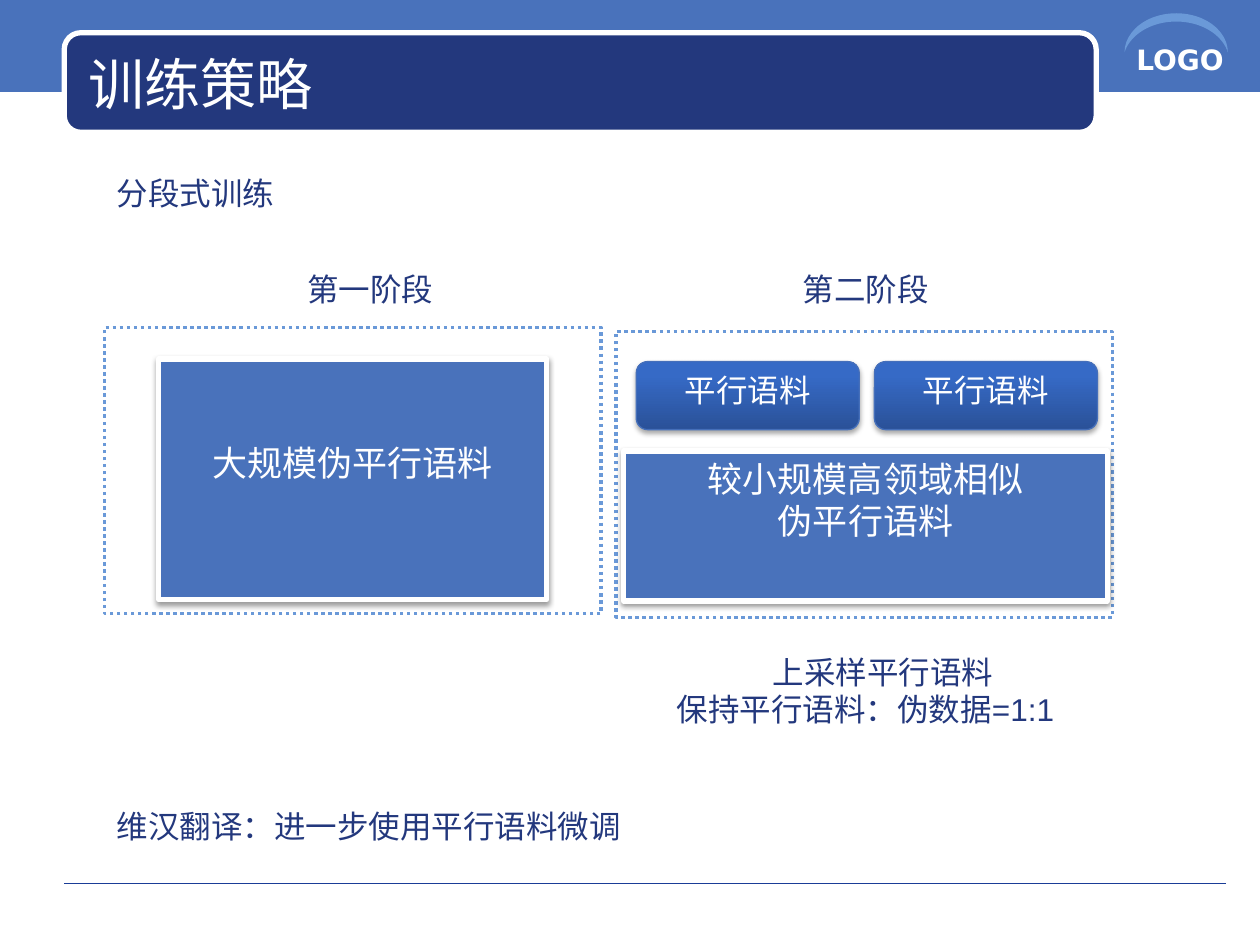
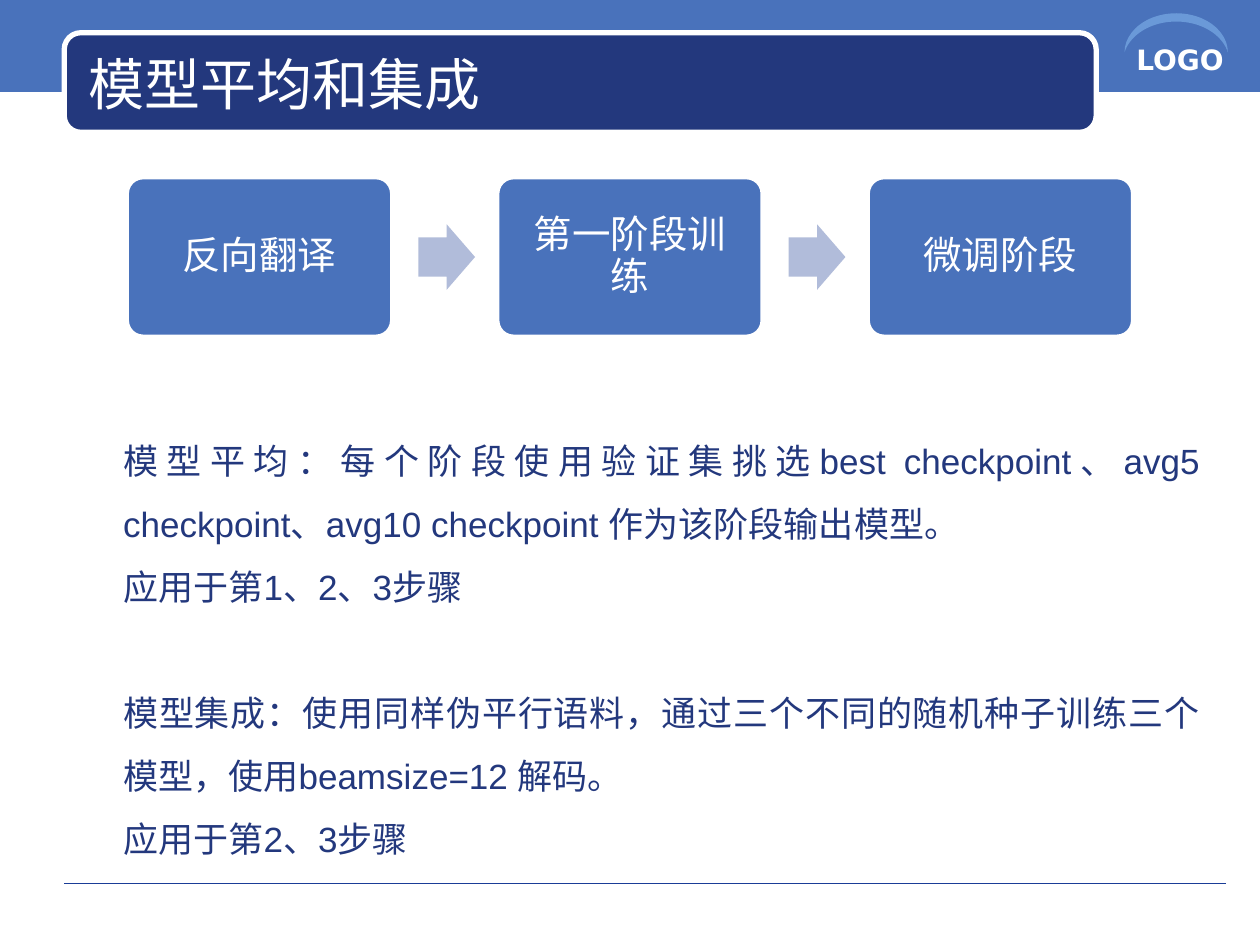
from copy import deepcopy

from lxml import etree
from pptx import Presentation
from pptx.dml.color import RGBColor
from pptx.enum import dml, shapes, text
from pptx.oxml.ns import qn
from pptx.util import Inches, Pt

SHAPE = shapes.MSO_SHAPE
ALIGN = text.PP_ALIGN
ANCHOR = text.MSO_ANCHOR


def color(value):
    return RGBColor.from_string(value)


class Deck:
    NAVY, BLUE, SKY, WHITE = "23387D", "4972BB", "6A99D8", "FFFFFF"
    PALE, RULE = "B1BCDA", "1A3D97"
    BUTTON_EDGE = "456FBA"
    BUTTON_STOPS = [(0, "2A5198"), (0.8, "366AC6"), (1, "346AC9")]
    BODY_FONT, HEAD_FONT = "Arial", "DejaVu Sans"

    def __init__(self):
        self.presentation = Presentation()
        self.presentation.slide_width = Inches(10)
        self.presentation.slide_height = Inches(7.5)
        self.slide = None

    def add_slide(self, title):
        layout = self.presentation.slide_layouts[5]
        self.slide = self.presentation.slides.add_slide(layout)
        # Band, footer rule, title plate and corner mark
        self.shape(SHAPE.RECTANGLE, (0, -0.02, 10, 0.75), self.BLUE)
        self.rule((0.51, 7.01), (9.73, 7.01))
        self.shape(SHAPE.ROUNDED_RECTANGLE, (0.51, 0.26, 8.19, 0.79), self.NAVY,
                   (self.WHITE, 3))
        self.label((8.92, 0.29, 1.08, 0.37), ["LOGO"], size=16, ink=self.WHITE,
                   font=self.HEAD_FONT, bold=True)
        arc = self.shape(SHAPE.MOON, (9.18, -0.15, 0.31, 0.82), self.SKY,
                         adjust=[0.212])
        arc.rotation = 90
        # Title, brought in front of its plate
        placeholder = self.slide.shapes.title
        placeholder.left, placeholder.top = Inches(0.6), Inches(0.35)
        placeholder.width, placeholder.height = Inches(8), Inches(0.62)
        placeholder.text_frame.auto_size = text.MSO_AUTO_SIZE.NONE
        self.set_text(placeholder, [title], size=32, ink=self.WHITE,
                      font=self.HEAD_FONT, anchor=ANCHOR.MIDDLE)
        placeholder.element.getparent().append(placeholder.element)

    def shape(self, kind, at, fill, line=None, adjust=()):
        shape = self.slide.shapes.add_shape(kind, *map(Inches, at))
        shape.shadow.inherit = False
        for index, value in enumerate(adjust):
            shape.adjustments[index] = value
        shape.fill.solid()
        shape.fill.fore_color.rgb = color(fill)
        if line:
            shape.line.color.rgb = color(line[0])
            shape.line.width = Pt(line[1])
        else:
            shape.line.fill.background()
        return shape

    def rule(self, start, end):
        line = self.slide.shapes.add_connector(
            shapes.MSO_CONNECTOR.STRAIGHT, *map(Inches, start + end))
        line.line.color.rgb = color(self.RULE)
        line.line.width = Pt(0.25)
        etree.SubElement(line.element.spPr, qn("a:effectLst"))

    def dotted_frame(self, at):
        frame = self.shape(SHAPE.RECTANGLE, at, self.WHITE, (self.SKY, 2))
        frame.line.dash_style = dml.MSO_LINE.ROUND_DOT

    def corpus_block(self, at, lines, top=0.05):
        block = self.shape(SHAPE.RECTANGLE, at, self.BLUE, (self.WHITE, 3))
        self.drop_shadow(block, 38, 1.6)
        self.set_text(block, lines, size=20, ink=self.WHITE, align=ALIGN.CENTER)
        block.text_frame.margin_top = Inches(top)

    def button(self, at, caption):
        button = self.shape(SHAPE.ROUNDED_RECTANGLE, at, self.BLUE,
                            (self.BUTTON_EDGE, 0.75))
        button.fill.gradient()
        button.fill.gradient_angle = 90
        stop_list = button.element.spPr.find(".//" + qn("a:gsLst"))
        stop_list.append(deepcopy(stop_list[-1]))
        for stop, (position, value) in zip(button.fill.gradient_stops,
                                           self.BUTTON_STOPS):
            stop.position = position
            stop.color.rgb = color(value)
        self.drop_shadow(button, 35, 1.8)
        self.set_text(button, [caption], ink=self.WHITE, align=ALIGN.CENTER)

    def drop_shadow(self, shape, opacity, distance):
        effects = shape.element.spPr.find(qn("a:effectLst"))
        shadow = etree.SubElement(
            effects, qn("a:outerShdw"), blurRad=str(Pt(3.1)),
            dist=str(Pt(distance)), dir="5400000", rotWithShape="0")
        black = etree.SubElement(shadow, qn("a:srgbClr"), val="000000")
        etree.SubElement(black, qn("a:alpha"), val=str(opacity * 1000))

    def label(self, at, lines, **style):
        box = self.slide.shapes.add_textbox(*map(Inches, at))
        self.set_text(box, lines, **style)
        return box.text_frame.paragraphs

    def set_text(self, shape, lines, size=18, ink=NAVY, font=BODY_FONT, bold=False,
                 align=ALIGN.LEFT, anchor=ANCHOR.TOP, spacing=None):
        frame = shape.text_frame
        frame.word_wrap = True
        frame.vertical_anchor = anchor
        for index, line in enumerate(lines):
            paragraph = frame.add_paragraph() if index else frame.paragraphs[0]
            paragraph.alignment = align
            if spacing:
                paragraph.line_spacing = spacing
            run = paragraph.add_run()
            run.text = line
            run.font.size = Pt(size)
            run.font.name = font
            run.font.bold = bold
            run.font.color.rgb = color(ink)

    def indent(self, paragraph, inches):
        properties = paragraph._p.get_or_add_pPr()
        properties.set("marL", str(Inches(inches)))
        properties.set("indent", "0")


def training_strategy(deck):
    deck.add_slide("训练策略")
    # Stage one
    deck.dotted_frame((0.83, 2.6, 3.94, 2.27))
    deck.corpus_block((1.26, 2.85, 3.08, 1.91), ["大规模伪平行语料"], top=0.65)
    # Stage two
    deck.dotted_frame((4.89, 2.63, 3.94, 2.27))
    deck.corpus_block((4.95, 3.58, 3.84, 1.19),
                      ["较小规模高领域相似", "伪平行语料"])
    for column in range(2):
        deck.button((5.05 + 1.89 * column, 2.87, 1.77, 0.54), "平行语料")
    # Headings and notes
    deck.label((0.83, 1.33, 2.93, 0.4), ["分段式训练"])
    shifted = [
        ((0.83, 2.09, 3.94, 0.4), ["第一阶段"]),
        ((4.76, 2.09, 3.94, 0.4), ["第二阶段"]),
        ((4.95, 5.13, 3.84, 0.71), ["上采样平行语料", "保持平行语料：伪数据=1:1"]),
    ]
    for at, lines in shifted:
        paragraphs = deck.label(at, lines, align=ALIGN.CENTER)
        deck.indent(paragraphs[0], 0.28)
    deck.label((0.83, 6.36, 7, 0.4), ["维汉翻译：进一步使用平行语料微调"])


def averaging_and_ensemble(deck):
    deck.add_slide("模型平均和集成")
    # Explanation
    paragraphs = deck.label((0.38, 3.27, 9.24, 3.57), [
        "模型平均：每个阶段使用验证集挑选best checkpoint、avg5 checkpoint、"
        "avg10 checkpoint 作为该阶段输出模型。",
        "应用于第1、2、3步骤",
        "模型集成：使用同样伪平行语料，通过三个不同的随机种子训练三个模型，"
        "使用beamsize=12 解码。",
        "应用于第2、3步骤",
    ], size=20, align=ALIGN.JUSTIFY, spacing=1.5)
    for paragraph in paragraphs:
        deck.indent(paragraph, 0.5)
    paragraphs[2].space_before = Pt(36)
    # Process steps joined by arrows
    steps = ["反向翻译", "第一阶段训练", "微调阶段"]
    for index, step in enumerate(steps):
        left = 1.01 + 2.94 * index
        card = deck.shape(SHAPE.ROUNDED_RECTANGLE, (left, 1.41, 2.1, 1.26),
                          deck.BLUE, (deck.WHITE, 2), [0.1])
        deck.set_text(card, [step], size=22, ink=deck.WHITE, font=deck.HEAD_FONT,
                      align=ALIGN.CENTER, anchor=ANCHOR.MIDDLE, spacing=0.9)
        card.text_frame.margin_left = card.text_frame.margin_right = Inches(0.1)
        if index < len(steps) - 1:
            deck.shape(SHAPE.RIGHT_ARROW, (left + 2.31, 1.78, 0.45, 0.52),
                       deck.PALE, adjust=[0.6, 0.5])


def main():
    deck = Deck()
    training_strategy(deck)
    averaging_and_ensemble(deck)
    deck.presentation.save("out.pptx")


if __name__ == "__main__":
    main()
